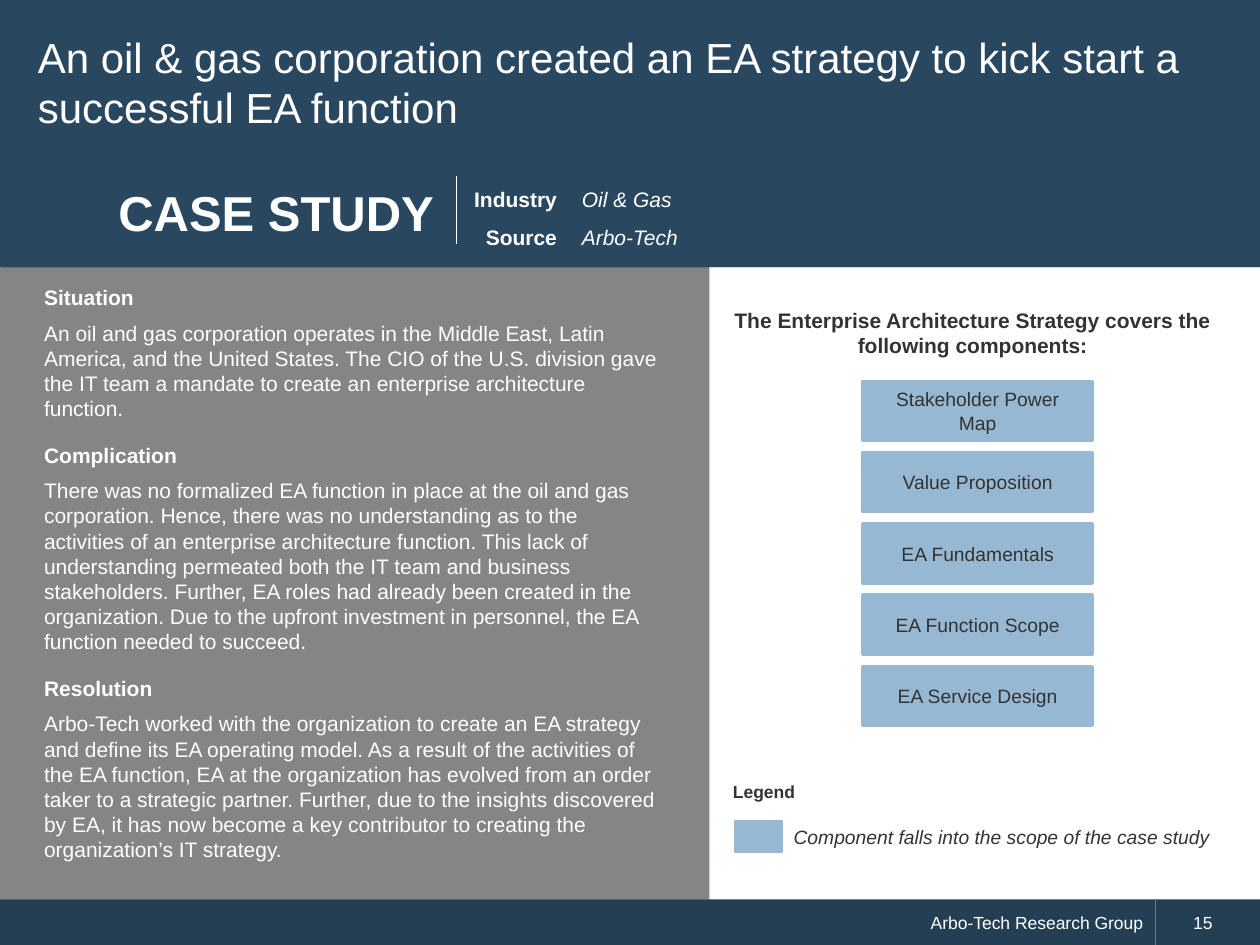
from lxml import etree
from pptx import Presentation
from pptx.dml.color import RGBColor
from pptx.enum.shapes import MSO_CONNECTOR, MSO_SHAPE
from pptx.enum.text import MSO_ANCHOR, MSO_AUTO_SIZE, PP_ALIGN
from pptx.oxml import parse_xml
from pptx.oxml.ns import qn
from pptx.util import Pt

RECT = MSO_SHAPE.RECTANGLE
LEFT, MID, RIGHT = PP_ALIGN.LEFT, PP_ALIGN.CENTER, PP_ALIGN.RIGHT
TOP, CENTER = MSO_ANCHOR.TOP, MSO_ANCHOR.MIDDLE
COLOR = {"navy": "29475F", "foot": "243F54", "gray": "858585",
         "sky": "96B8D2", "white": "FFFFFF", "ink": "333333"}
RGB = {name: RGBColor.from_string(code) for name, code in COLOR.items()}

deck = Presentation()
deck.slide_width, deck.slide_height = Pt(720), Pt(540)
slide = deck.slides.add_slide(deck.slide_layouts[1])
shapes = slide.shapes


def block(x, y, w, h, fill, line=None):
    """Add a filled rectangle without a shadow."""
    shape = shapes.add_shape(RECT, Pt(x), Pt(y), Pt(w), Pt(h))
    shape.shadow.inherit = False
    shape.fill.solid()
    shape.fill.fore_color.rgb = RGB[fill]
    if line:
        shape.line.color.rgb = RGB[fill]
        shape.line.width = Pt(line)
    else:
        shape.line.fill.background()
    return shape


def write(shape, lines, size, color="white", align=LEFT, anchor=TOP,
          inset=(7.2, 3.6, 7.2, 3.6), para=None, **font):
    """Fill a shape with one paragraph per line; para and font hold formats."""
    frame = shape.text_frame
    frame.word_wrap = True
    frame.auto_size = MSO_AUTO_SIZE.NONE
    frame.vertical_anchor = anchor
    for side, gap in zip(("left", "top", "right", "bottom"), inset):
        setattr(frame, "margin_" + side, Pt(gap))
    frame.text = "\n".join(lines)
    looks = {"name": "Arial", "size": Pt(size), **font}
    layout = {"alignment": align, "space_before": Pt(0), **(para or {})}
    for item in frame.paragraphs:
        for key, value in layout.items():
            setattr(item, key, value)
        for run in item.runs:
            run.font.color.rgb = RGB[color]
            for key, value in looks.items():
                setattr(run.font, key, value)


# Title and story
title, body = shapes.title, slide.placeholders[1]
for shape, place in ((title, (0, 0, 720, 93.6)), (body, (18, 159, 366.5, 340.5))):
    shape.left, shape.top, shape.width, shape.height = map(Pt, place)
title.fill.solid()
title.fill.fore_color.rgb = RGB["navy"]
write(title, ["An oil & gas corporation created an EA strategy to kick start a "
              "successful EA function"],
      24, anchor=CENTER, inset=(21.6, 7.2, 21.6, 7.2), para={"space_after": Pt(8)})

panel = block(0, 148.3, 405.4, 365.8, "gray")
body.element.addprevious(panel.element)
story = {
    "Situation":
        "An oil and gas corporation operates in the Middle East, Latin America, "
        "and the United States. The CIO of the U.S. division gave the IT team a "
        "mandate to create an enterprise architecture function.",
    "Complication":
        "There was no formalized EA function in place at the oil and gas "
        "corporation. Hence, there was no understanding as to the activities of "
        "an enterprise architecture function. This lack of understanding "
        "permeated both the IT team and business stakeholders. Further, EA roles "
        "had already been created in the organization. Due to the upfront "
        "investment in personnel, the EA function needed to succeed.",
    "Resolution":
        "Arbo-Tech worked with the organization to create an EA strategy and "
        "define its EA operating model. As a result of the activities of the EA "
        "function, EA at the organization has evolved from an order taker to a "
        "strategic partner. Further, due to the insights discovered by EA, it "
        "has now become a key contributor to creating the organization’s IT "
        "strategy.",
}
write(body, [text for pair in story.items() for text in pair], 12,
      para={"space_after": Pt(6)})
for i, item in enumerate(body.text_frame.paragraphs):
    head = i % 2 == 0
    item.runs[0].font.bold = head
    item.space_before = Pt(6 if head and i else 0)
    props = item._p.get_or_add_pPr()
    props.set("marL", "0")
    props.set("indent", "0")
    etree.SubElement(props, qn("a:buNone"))

# Case study band
band = block(0, 90, 720, 62.6, "navy")
write(band, ["CASE STUDY"], 28, anchor=CENTER, inset=(67.7, 3.6, 7.2, 3.6), bold=True)
band.element.spPr.remove(band.element.spPr.find(qn("a:effectLst")))
band.element.spPr.append(parse_xml(
    '<a:effectLst xmlns:a="http://schemas.openxmlformats.org/drawingml/2006/main">'
    '<a:outerShdw blurRad="0" dist="12700" dir="2700000"><a:srgbClr val="000000">'
    '<a:alpha val="14000"/></a:srgbClr></a:outerShdw></a:effectLst>'))
wide = {"line_spacing": 1.5}
write(block(257, 95.8, 68.4, 48.2, "navy"), ["Industry", "Source"], 12,
      align=RIGHT, para=wide, bold=True)
rule = shapes.add_connector(MSO_CONNECTOR.STRAIGHT, Pt(260.8), Pt(100.8),
                            Pt(260.8), Pt(139.7))
rule.line.color.rgb = RGB["white"]
rule.line.width = Pt(0.75)
etree.SubElement(rule.element.spPr, qn("a:effectLst"))

# Components
parts = ["Stakeholder Power Map", "Value Proposition", "EA Fundamentals",
         "EA Function Scope", "EA Service Design"]
for i, part in enumerate(parts):
    write(block(493.2, 217.9 + 40.75 * i, 131, 33.8, "sky", 2), [part], 11, "ink",
          MID, CENTER)

# Plain texts and legend
block(420.5, 469.4, 25.9, 17.3, "sky", 2)
texts = [
    ((325.4, 95.8, 294.5, 51.1), ["Oil & Gas", "Arbo-Tech"],
     {"size": 12, "para": wide, "italic": True}),
    ((399.6, 172.1, 312.5, 36),
     ["The Enterprise Architecture Strategy covers the following components:"],
     {"size": 12, "color": "ink", "align": MID, "bold": True}),
    ((446.4, 468, 273.6, 20.9), ["Component falls into the scope of the case study"],
     {"size": 11, "color": "ink", "italic": True}),
    ((411.8, 442.8, 108, 19.4), ["Legend"],
     {"size": 10, "color": "ink", "bold": True}),
]
for place, lines, style in texts:
    write(shapes.add_textbox(*map(Pt, place)), lines, **style)

# Footer
write(block(0, 513.9, 660.2, 26.3, "foot"), ["Arbo-Tech Research Group"], 10,
      align=RIGHT, anchor=CENTER)
write(block(660.2, 513.9, 59.8, 26.3, "foot"), ["15"], 10, anchor=CENTER,
      inset=(21.6, 3.6, 7.2, 3.6))

deck.save("out.pptx")
